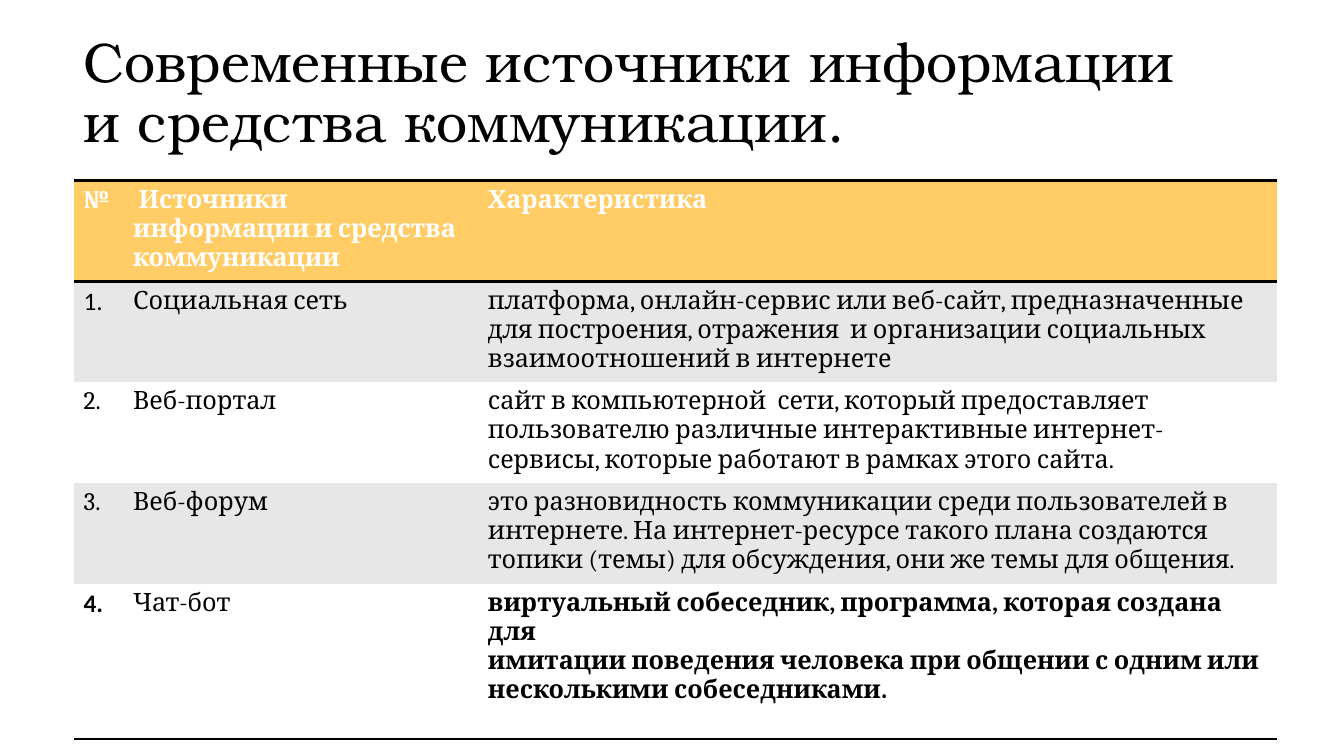
from lxml.etree import SubElement
from pptx import Presentation
from pptx.dml.color import RGBColor as Rgb
from pptx.enum.text import MSO_ANCHOR as Anchor
from pptx.oxml.ns import qn
from pptx.util import Inches, Pt

COLORS = {"text": "000000", "header": "FFCC66", "header_text": "FFFFFF",
          "band": "E7E7E7", "plain": "FFFFFF", "rule": "000000"}
TITLE = "Современные источники информации и средства коммуникации."
HEADER = ("№", " Источники информации и средства коммуникации", "Характеристика")
SOURCES = [
    ("Социальная сеть", "платформа, онлайн-сервис или веб-сайт, предназначенные для построения, "
     "отражения  и организации социальных взаимоотношений в интернете"),
    ("Веб-портал", "сайт в компьютерной  сети, который предоставляет пользователю различные "
     "интерактивные интернет-сервисы, которые работают в рамках этого сайта."),
    ("Веб-форум", "это разновидность коммуникации среди пользователей в интернете. "
     "На интернет-ресурсе такого плана создаются топики (темы) для обсуждения, "
     "они же темы для общения."),
    ("Чат-бот", "виртуальный собеседник, программа, которая создана для\n"
     "имитации поведения человека при общении с одним или\n"
     "несколькими собеседниками."),
]
COLUMN_WIDTHS = (0.49, 3.52, 7.93)
ROW_HEIGHTS = (0.96, 0.96, 0.96, 0.96, 1.54)


def write(frame, text, font="Cambria", size=18, color="text", bold=False, spacing=None):
    """Fill a text frame with one paragraph per line of text."""
    for index, line in enumerate(text.split("\n")):
        para = frame.add_paragraph() if index else frame.paragraphs[0]
        if spacing:
            para.line_spacing = spacing
        span = para.add_run()
        span.text = line
        span.font.name = font
        span.font.size = Pt(size)
        span.font.bold = bold
        span.font.color.rgb = Rgb.from_string(COLORS[color])


class SlideBuilder:
    """Hold the style and the current slide."""

    def __init__(self, deck):
        self.slide = deck.slides.add_slide(deck.slide_layouts[6])

    def title(self, text, left, top, width, height):
        box = self.slide.shapes.add_textbox(*map(Inches, (left, top, width, height)))
        box.text_frame.word_wrap = True
        box.text_frame.vertical_anchor = Anchor.MIDDLE
        write(box.text_frame, text, font="TeX Gyre Bonum", size=39.6, spacing=0.9)

    def table(self, left, top, widths, heights):
        place = map(Inches, (left, top, sum(widths), sum(heights)))
        table = self.slide.shapes.add_table(len(heights), len(widths), *place).table
        for column, width in zip(table.columns, widths):
            column.width = Inches(width)
        for row, height in zip(table.rows, heights):
            row.height = Inches(height)
        return table

    def cell(self, cell, text, fill, ruled_sides=(), **style):
        write(cell.text_frame, text, **style)
        cell.fill.solid()
        cell.fill.fore_color.rgb = Rgb.from_string(COLORS[fill])
        properties = cell._tc.get_or_add_tcPr()
        for index, side in enumerate(("lnL", "lnR", "lnT", "lnB")):
            ruled = side in ruled_sides
            line = SubElement(properties, qn(f"a:{side}"), w=str(Pt(2) if ruled else 0))
            properties.insert(index, line)
            paint = SubElement(line, qn("a:solidFill" if ruled else "a:noFill"))
            if ruled:
                SubElement(paint, qn("a:srgbClr"), val=COLORS["rule"])


def main():
    deck = Presentation()
    deck.slide_width, deck.slide_height = Inches(13.33), Inches(7.5)
    builder = SlideBuilder(deck)
    builder.title(TITLE, 0.73, 0.21, 11.5, 1.45)
    table = builder.table(0.73, 1.79, COLUMN_WIDTHS, ROW_HEIGHTS)
    for column, text in enumerate(HEADER):
        builder.cell(table.cell(0, column), text, "header", ("lnT", "lnB"),
                     color="header_text", bold=True)
    for row, (source, description) in enumerate(SOURCES, start=1):
        last = row == len(SOURCES)
        sides = ("lnT",) if row == 1 else ("lnB",) if last else ()
        for column, text in enumerate((f"{row}.", source, description)):
            builder.cell(table.cell(row, column), text, "band" if row % 2 else "plain", sides,
                         font="Calibri" if column == 0 and row in (1, 4) else "Cambria",
                         bold=last and column != 1)
    deck.save("out.pptx")


if __name__ == "__main__":
    main()
